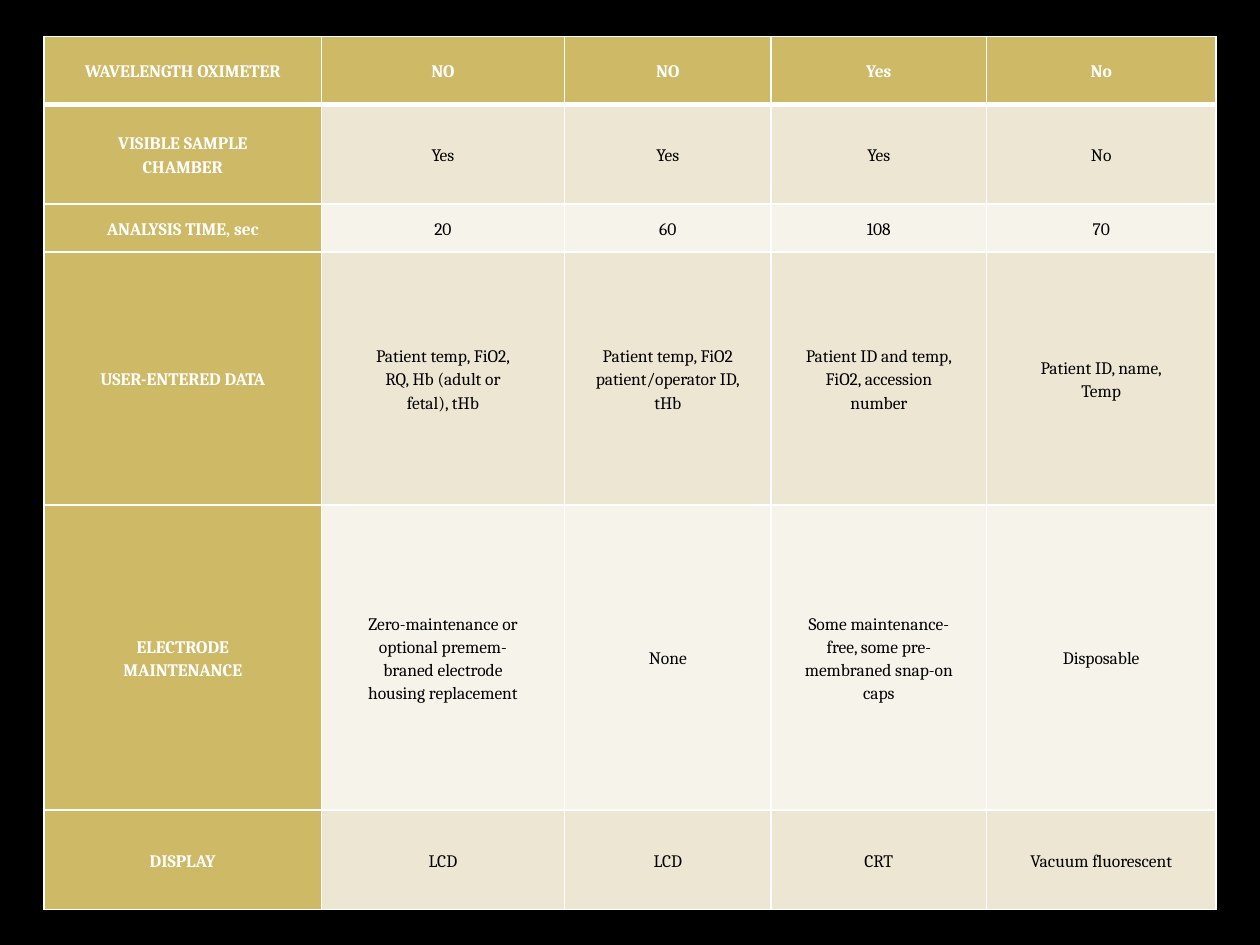
from dataclasses import dataclass

from lxml import etree
from pptx import Presentation
from pptx import util as u
from pptx.dml.color import RGBColor
from pptx.enum import text
from pptx.oxml.ns import qn

BLACK, WHITE, GOLD = "000000", "FFFFFF", "CEB966"
BANDS = ("F6F3EA", "EDE6D3")  # even rows, odd rows
COLUMN_WIDTHS = (2.2, 1.93, 1.64, 1.71, 1.82)
LEFT, TOP = 0.35, 0.29
THIN, THICK = 1, 3


@dataclass
class Feature:
    """One row: a label and the value for each analyzer; a newline starts a paragraph."""
    height: float
    label: str
    values: tuple[str, ...]


FEATURES = (
    Feature(0.54, "WAVELENGTH OXIMETER", ("NO", "NO", "Yes", "No")),
    Feature(0.79, "VISIBLE SAMPLE\nCHAMBER", ("Yes", "Yes", "Yes", "No")),
    Feature(0.38, "ANALYSIS TIME, sec", ("20", "60", "108", "70")),
    Feature(2.01, "USER-ENTERED DATA", (
        "Patient temp, FiO2,\nRQ, Hb (adult or\nfetal), tHb",
        "Patient temp, FiO2\npatient/operator ID,\ntHb",
        "Patient ID and temp,\nFiO2, accession\nnumber",
        "Patient ID, name,\nTemp")),
    Feature(2.42, "ELECTRODE\nMAINTENANCE", (
        "Zero-maintenance or\noptional premem-\nbraned electrode\nhousing replacement",
        "None",
        "Some maintenance-\nfree, some pre-\nmembraned snap-on\ncaps",
        "Disposable")),
    Feature(0.79, "DISPLAY", ("LCD", "LCD", "CRT", "Vacuum fluorescent")),
)


def rgb(color: str) -> RGBColor:
    return RGBColor.from_string(color)


def set_borders(cell, top: float, bottom: float) -> None:
    properties = cell._tc.get_or_add_tcPr()
    widths = {"a:lnL": THIN, "a:lnR": THIN, "a:lnT": top, "a:lnB": bottom}
    for position, (tag, width) in enumerate(widths.items()):
        line = etree.Element(qn(tag), w=str(u.Pt(width)))
        fill = etree.SubElement(line, qn("a:solidFill"))
        etree.SubElement(fill, qn("a:srgbClr"), val=WHITE)
        properties.insert(position, line)  # borders come before the cell fill


def write_cell(cell, content: str, fill: str, color: str, bold: bool) -> None:
    cell.fill.solid()
    cell.fill.fore_color.rgb = rgb(fill)
    cell.vertical_anchor = text.MSO_ANCHOR.MIDDLE
    cell.margin_left = cell.margin_right = u.Inches(0.07)
    cell.margin_top = cell.margin_bottom = 0
    frame = cell.text_frame
    for number, words in enumerate(content.split("\n")):
        paragraph = frame.add_paragraph() if number else frame.paragraphs[0]
        paragraph.alignment = text.PP_ALIGN.CENTER
        paragraph.line_spacing = 1.15
        run = paragraph.add_run()
        run.text = words
        run.font.name = "Cambria"
        run.font.size = u.Pt(10)
        run.font.bold = bold
        run.font.color.rgb = rgb(color)


def add_comparison(slide) -> None:
    heights = [feature.height for feature in FEATURES]
    comparison = slide.shapes.add_table(
        len(FEATURES), len(COLUMN_WIDTHS), u.Inches(LEFT), u.Inches(TOP),
        u.Inches(sum(COLUMN_WIDTHS)), u.Inches(sum(heights))).table
    for column, width in zip(comparison.columns, COLUMN_WIDTHS):
        column.width = u.Inches(width)
    for r, feature in enumerate(FEATURES):
        comparison.rows[r].height = u.Inches(feature.height)
        for c, content in enumerate((feature.label, *feature.values)):
            cell = comparison.cell(r, c)
            heading = r == 0 or c == 0
            write_cell(cell, content, GOLD if heading else BANDS[r % 2],
                       WHITE if heading else BLACK, heading)
            set_borders(cell, THICK if r == 1 else THIN, THICK if r == 0 else THIN)


def main() -> None:
    deck = Presentation()
    deck.slide_width, deck.slide_height = u.Inches(10), u.Inches(7.5)
    slide = deck.slides.add_slide(deck.slide_layouts[6])
    slide.background.fill.solid()
    slide.background.fill.fore_color.rgb = rgb(BLACK)
    add_comparison(slide)
    deck.save("out.pptx")


if __name__ == "__main__":
    main()
